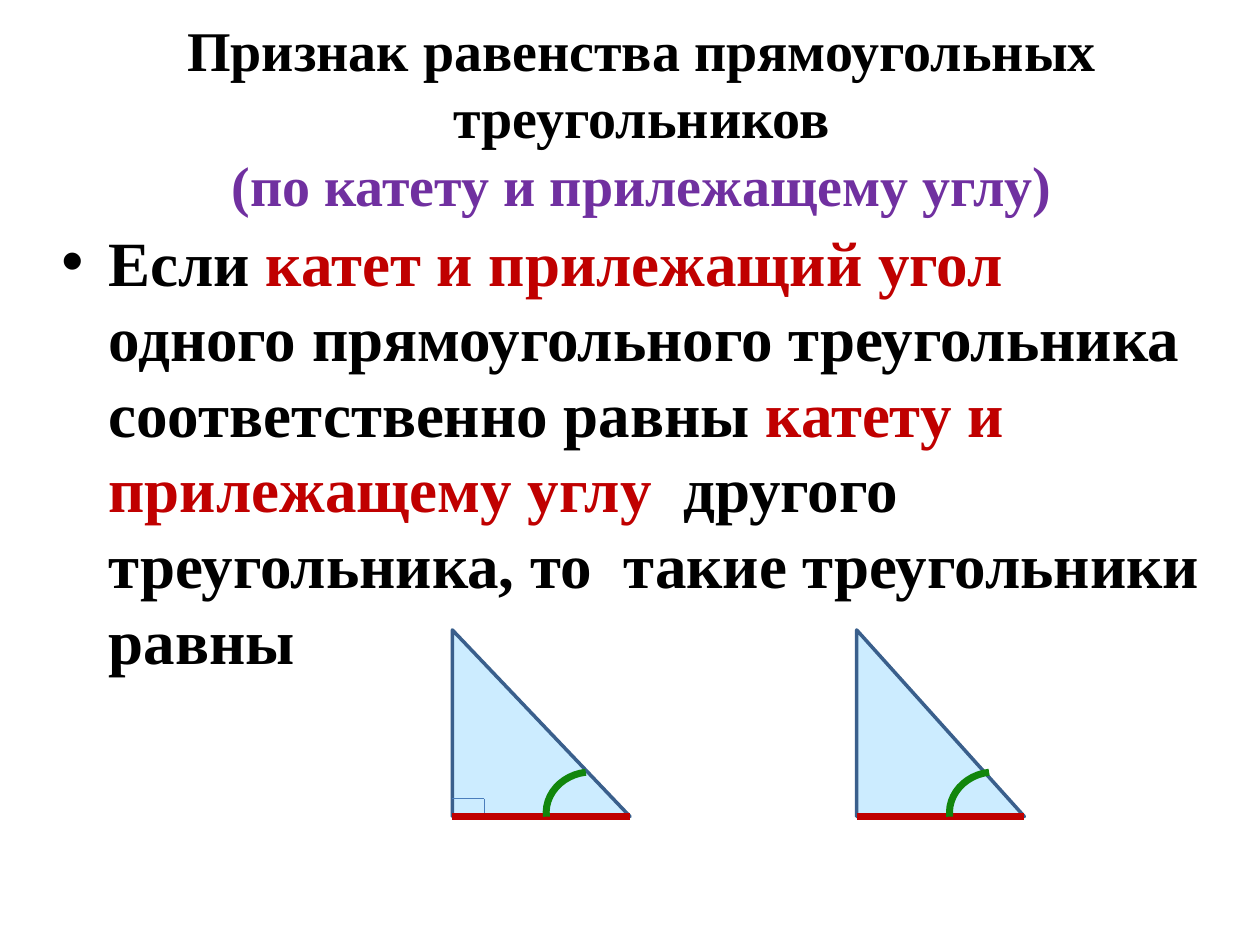
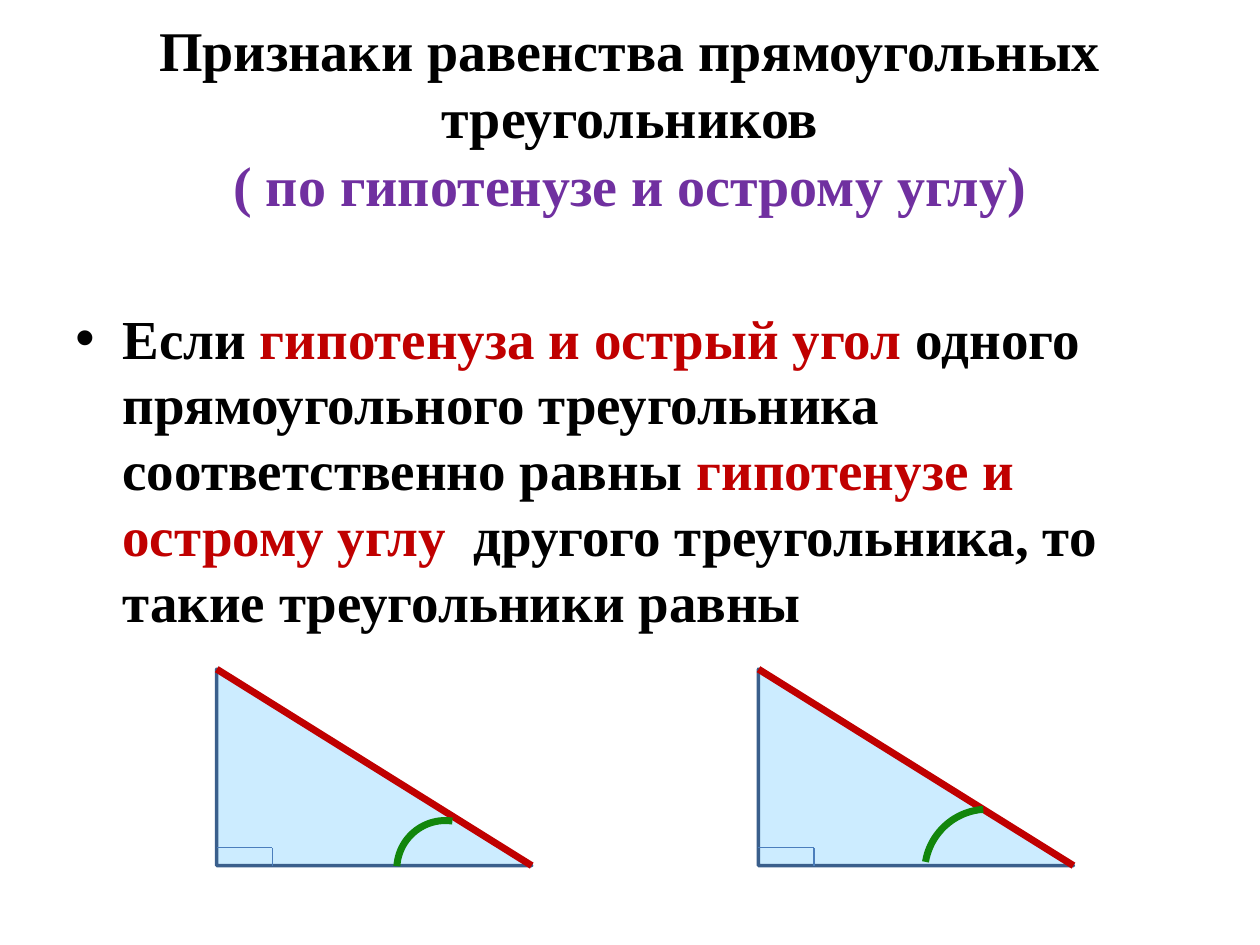
"""Build two slides on congruence criteria for right triangles."""
from dataclasses import dataclass

from lxml import etree
from pptx import Presentation
from pptx import util as u
from pptx.dml.color import RGBColor
from pptx.enum import shapes, text
from pptx.oxml import ns


@dataclass(frozen=True)
class Theme:
    font: str = "Times New Roman"
    ink: str = "000000"
    subtitle: str = "7030A0"
    accent: str = "C00000"
    fill: str = "CCECFF"
    outline: str = "3A5F8C"
    mark: str = "4B7EBC"
    angle: str = "12860C"
    title_size: float = 32
    outline_width: float = 2
    mark_width: float = 0.75
    accent_width: float = 4


theme = Theme()
rgb = RGBColor.from_string


def add_text(s, box, size, runs, anchor=text.MSO_ANCHOR.TOP):
    """Add a wrapped bold text box and return its frame and paragraph."""
    tf = s.shapes.add_textbox(*map(u.Cm, box)).text_frame
    tf.word_wrap = True
    tf.vertical_anchor = anchor
    p = tf.paragraphs[0]
    p.font.name, p.font.size, p.font.bold = theme.font, u.Pt(size), True
    for i, (words, color) in enumerate(runs):
        if words.startswith("\n"):
            p.add_line_break()
        r = p.add_run()
        r.text = words.lstrip("\n")
        r.font.color.rgb = rgb(color)
    return tf, p


def add_line(s, start, end, color, width):
    """Add a straight line without a shadow."""
    line = s.shapes.add_connector(shapes.MSO_CONNECTOR.STRAIGHT, *map(u.Cm, start + end))
    line.line.color.rgb = rgb(color)
    line.line.width = u.Pt(width)
    etree.SubElement(line._element.spPr, ns.qn("a:effectLst"))


# Triangle: left, width, has right-angle mark, arc (left, top, width, height, rotation, adjustments)
slides = [
    dict(
        title=("Признак равенства прямоугольных треугольников", "(по катету и прилежащему углу)"),
        title_width=23.34,
        body_box=(0.99, 4.37, 23.44, 4.95), body_size=36, body_inset=0.13,
        given="катет и прилежащий угол ", matched="катету и прилежащему углу  ",
        top=12.7, height=3.76, mark=(0.64, 0.36), equal_side="leg",
        triangles=[
            (9.12, 3.58, True, (11.1, 15.47, 1.6, 1.78, 263.5, (162, 0))),
            (17.27, 3.38, False, (19.23, 15.47, 1.6, 1.78, 263.5, (162, 0))),
        ],
    ),
    dict(
        title=("Признаки равенства прямоугольных треугольников", "( по гипотенузе и острому углу)"),
        title_width=22.86,
        body_box=(1.27, 4.45, 22.86, 7.47), body_size=31.4, body_inset=1.68,
        given="гипотенуза и острый угол ", matched="гипотенузе и острому углу  ",
        top=13.49, height=3.96, mark=(1.12, 0.36), equal_side="hypotenuse",
        triangles=[
            (4.37, 6.35, True, (8, 16.54, 1.96, 1.96, 273.5, (162, 2.86))),
            (15.29, 6.35, True, (18.64, 16.31, 2.54, 2.54, 279.4, (162, 207.93))),
        ],
    ),
]

prs = Presentation()
prs.slide_width, prs.slide_height = u.Cm(25.4), u.Cm(19.05)

for d in slides:
    s = prs.slides.add_slide(prs.slide_layouts[6])

    heading, criterion = d["title"]
    tf, p = add_text(s, (1.27, 0.76, d["title_width"], 3.18), theme.title_size,
                     [(heading, theme.ink), ("\n" + criterion, theme.subtitle)],
                     text.MSO_ANCHOR.MIDDLE)
    p.alignment = text.PP_ALIGN.CENTER

    tf, p = add_text(s, d["body_box"], d["body_size"], [
        ("Если ", theme.ink),
        (d["given"], theme.accent),
        ("одного прямоугольного треугольника соответственно равны ", theme.ink),
        (d["matched"], theme.accent),
        ("другого треугольника, то  такие треугольники равны", theme.ink),
    ])
    tf.margin_top = u.Cm(d["body_inset"])
    pPr = p._p.get_or_add_pPr()
    pPr.set("marL", str(u.Cm(0.95)))
    pPr.set("indent", str(u.Cm(-0.95)))
    bullet_font = etree.Element(ns.qn("a:buFont"), typeface="Arial")
    bullet = etree.Element(ns.qn("a:buChar"), char="•")
    pPr.insert(0, bullet_font)
    pPr.insert(1, bullet)

    top, bottom = d["top"], d["top"] + d["height"]
    mark_width, mark_height = d["mark"]
    for left, width, has_mark, (*arc_box, rotation, adjustments) in d["triangles"]:
        right = left + width
        sp = s.shapes.add_shape(shapes.MSO_SHAPE.RIGHT_TRIANGLE,
                                *map(u.Cm, (left, top, width, d["height"])))
        sp.shadow.inherit = False
        sp.fill.solid()
        sp.fill.fore_color.rgb = rgb(theme.fill)
        sp.line.color.rgb = rgb(theme.outline)
        sp.line.width = u.Pt(theme.outline_width)

        if has_mark:
            corner = (left + mark_width, bottom - mark_height)
            add_line(s, (left, corner[1]), corner, theme.mark, theme.mark_width)
            add_line(s, corner, (corner[0], bottom), theme.mark, theme.mark_width)

        start = (left, bottom if d["equal_side"] == "leg" else top)
        add_line(s, start, (right, bottom), theme.accent, theme.accent_width)

        arc = s.shapes.add_shape(shapes.MSO_SHAPE.ARC, *map(u.Cm, arc_box))
        arc.shadow.inherit = False
        arc.rotation = rotation
        for i, value in enumerate(adjustments):
            arc.adjustments[i] = value
        arc.fill.background()
        arc.line.color.rgb = rgb(theme.angle)
        arc.line.width = u.Pt(theme.accent_width)

prs.save("out.pptx")
